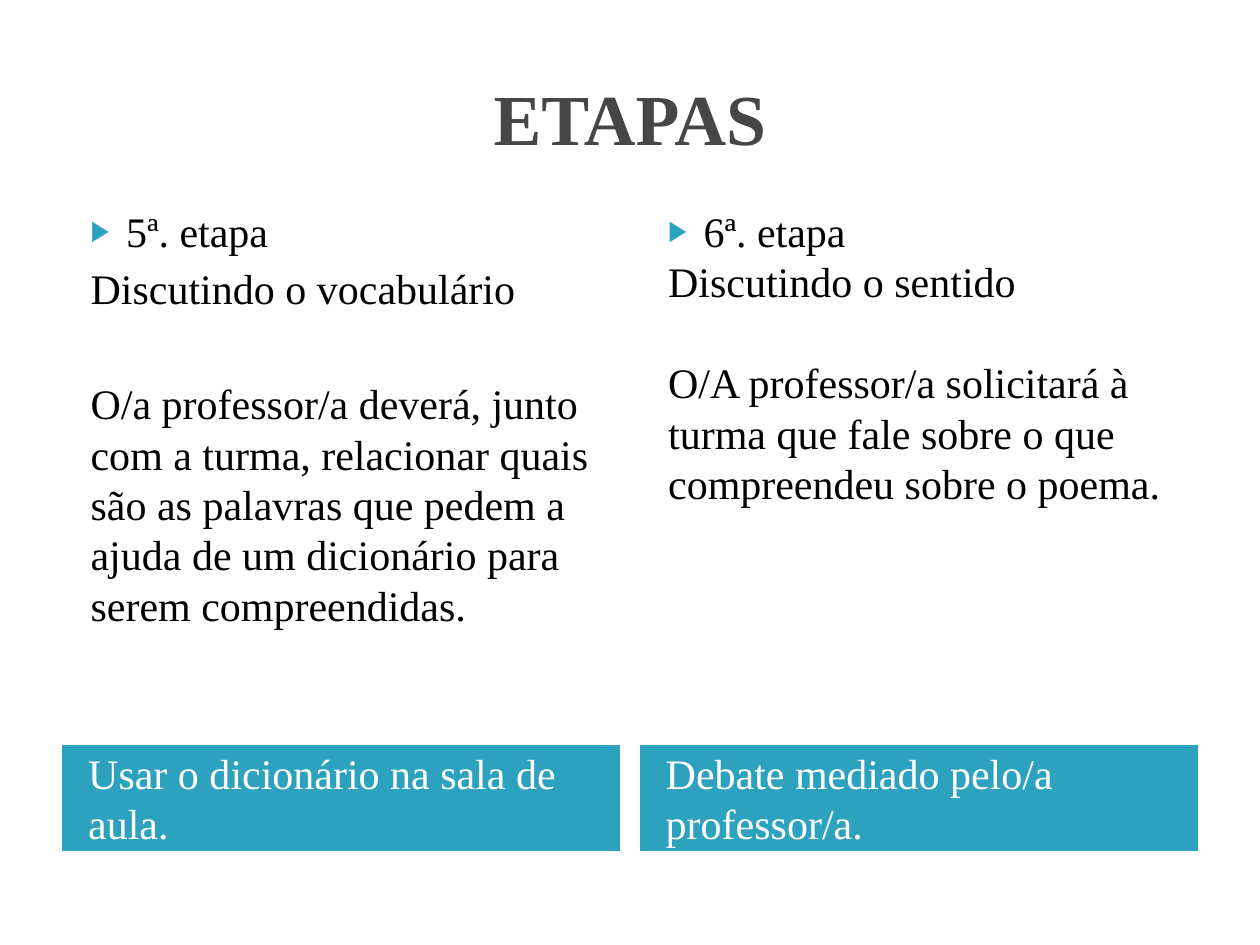
from lxml.etree import SubElement
from pptx import Presentation
from pptx.dml.color import RGBColor
from pptx.enum.text import MSO_ANCHOR, MSO_AUTO_SIZE, PP_ALIGN
from pptx.oxml.ns import qn
from pptx.util import Pt

COLORS = {"title": "464646", "text": "000000", "accent": "2DA2BF", "light": "FFFFFF"}
FONT = "Times New Roman"
TEXT_SIZE = 24
BLANK_LINE = 28.8
LEFT, COLUMN_WIDTH, COLUMN_STEP = 36, 318, 330

STAGES = [
    {
        "heading": "5ª. etapa",
        "topic": "Discutindo o vocabulário",
        "detail": "O/a professor/a deverá, junto com a turma, relacionar quais são as "
                  "palavras que pedem a ajuda de um dicionário para serem compreendidas.",
        "banner": "Usar o dicionário na sala de aula.",
        "topic_gap": 4,
        "detail_gap": BLANK_LINE + 8,
    },
    {
        "heading": "6ª. etapa",
        "topic": "Discutindo o sentido",
        "detail": "O/A professor/a solicitará à turma que fale sobre o que "
                  "compreendeu sobre o poema.",
        "banner": "Debate mediado pelo/a professor/a.",
        "topic_gap": 0,
        "detail_gap": BLANK_LINE,
    },
]


def color(name):
    return RGBColor.from_string(COLORS[name])


def write(paragraph, text, size=TEXT_SIZE, ink="text", bold=False,
          align=PP_ALIGN.LEFT, before=0, margin=0, indent=0, bullet=None):
    paragraph.alignment = align
    paragraph.space_before = Pt(before)
    paragraph.space_after = Pt(0)
    properties = paragraph._p.get_or_add_pPr()
    properties.set("marL", str(Pt(margin)))
    properties.set("indent", str(Pt(indent)))
    if bullet:
        bullet_color = SubElement(properties, qn("a:buClr"))
        SubElement(bullet_color, qn("a:srgbClr"), val=COLORS["accent"])
        SubElement(properties, qn("a:buSzPct"), val="68000")
        SubElement(properties, qn("a:buChar"), char=bullet)
    else:
        SubElement(properties, qn("a:buNone"))
    run = paragraph.add_run()
    run.text = text
    run.font.name = FONT
    run.font.size = Pt(size)
    run.font.bold = bold
    run.font.color.rgb = color(ink)


class StageSlide:
    """Fills the placeholders of one comparison slide."""

    def __init__(self, slide):
        self.slide = slide

    def place(self, index, left, top, width, height, anchor):
        """Move a placeholder and return it with its text frame set up."""
        shape = self.slide.placeholders[index]
        shape.left, shape.top = Pt(left), Pt(top)
        shape.width, shape.height = Pt(width), Pt(height)
        frame = shape.text_frame
        frame.auto_size = MSO_AUTO_SIZE.NONE
        frame.word_wrap = True
        frame.vertical_anchor = anchor
        return shape

    def title(self, text):
        shape = self.place(0, LEFT, 21.6, 648, 90, MSO_ANCHOR.MIDDLE)
        write(shape.text_frame.paragraphs[0], text, size=41, ink="title",
              bold=True, align=PP_ALIGN.CENTER)

    def banner(self, index, left, text):
        shape = self.place(index, left, 426, COLUMN_WIDTH, 60, MSO_ANCHOR.MIDDLE)
        shape.fill.solid()
        shape.fill.fore_color.rgb = color("accent")
        shape.line.color.rgb = color("accent")
        shape.line.width = Pt(0.75)
        shape.text_frame.margin_left = Pt(14.4)
        write(shape.text_frame.paragraphs[0], text, ink="light")

    def stage_text(self, index, left, stage):
        shape = self.place(index, left, 113.8, COLUMN_WIDTH, 310, MSO_ANCHOR.TOP)
        frame = shape.text_frame
        write(frame.paragraphs[0], stage["heading"], margin=28.8, indent=-20.2, bullet="▶")
        for part in ("topic", "detail"):
            write(frame.add_paragraph(), stage[part], margin=8.6, before=stage[part + "_gap"])


def main():
    presentation = Presentation()
    presentation.slide_width, presentation.slide_height = Pt(720), Pt(540)
    comparison_layout = presentation.slide_layouts[4]
    stage_slide = StageSlide(presentation.slides.add_slide(comparison_layout))
    stage_slide.title("ETAPAS")
    for column, stage in enumerate(STAGES):
        left = LEFT + column * COLUMN_STEP
        stage_slide.banner(1 + 2 * column, left, stage["banner"])
        stage_slide.stage_text(2 + 2 * column, left, stage)
    presentation.save("out.pptx")


if __name__ == "__main__":
    main()
